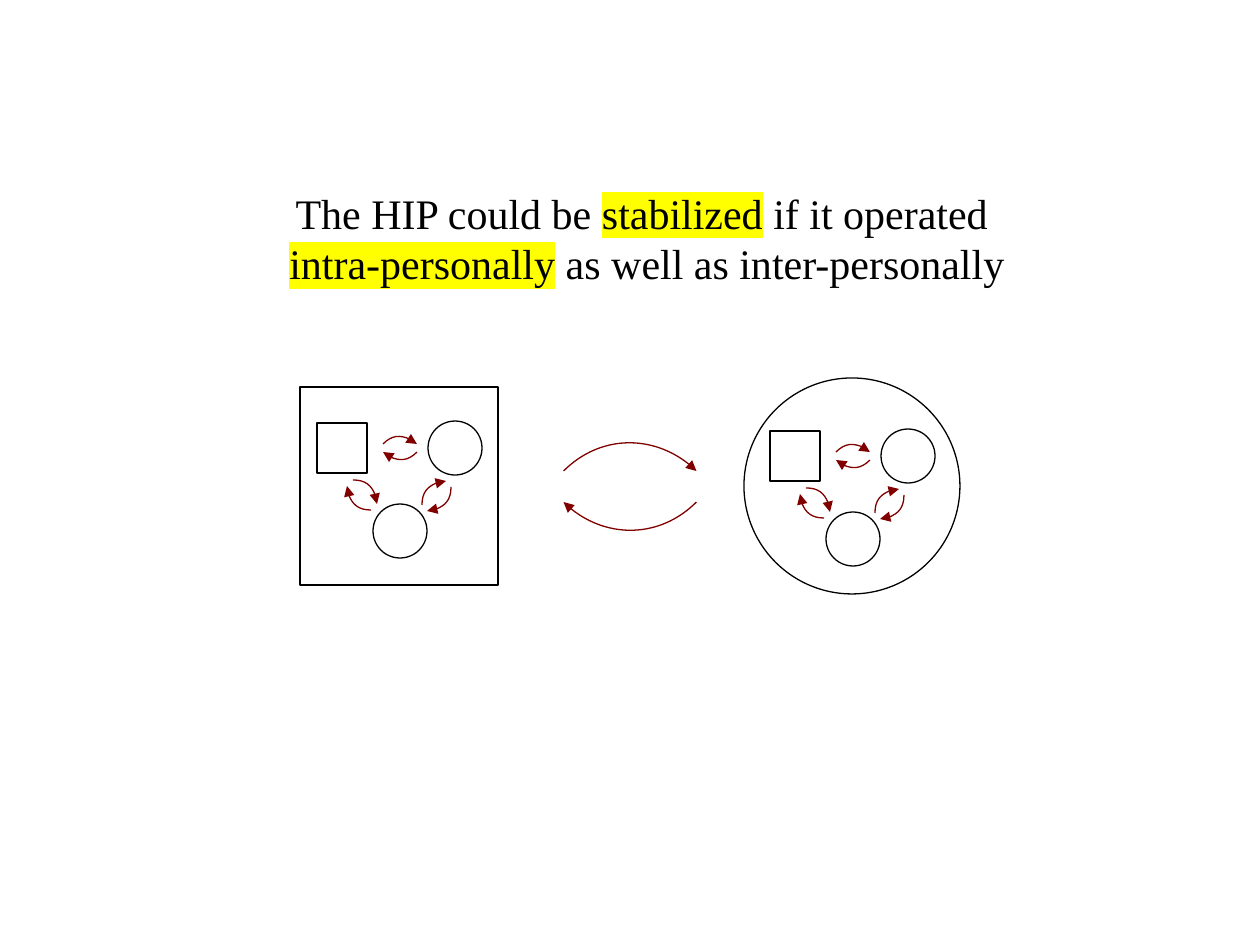
from dataclasses import dataclass

from lxml.etree import SubElement
from pptx import Presentation
from pptx.dml.color import RGBColor
from pptx.enum.shapes import MSO_SHAPE
from pptx.enum.text import MSO_ANCHOR, MSO_AUTO_SIZE, PP_ALIGN
from pptx.oxml import parse_xml
from pptx.oxml.ns import nsdecls, qn
from pptx.shapes.autoshape import Shape
from pptx.util import Emu, Pt

PX = 914400 / 126
BLACK, MAROON, YELLOW = "000000", "800000", "FFFF00"
QUARTER = (
    '<a:moveTo><a:pt x="0" y="0"/></a:moveTo>'
    '<a:cubicBezTo><a:pt x="55" y="0"/><a:pt x="100" y="45"/><a:pt x="100" y="100"/></a:cubicBezTo>'
)
SECTOR = (
    QUARTER + '<a:lnTo><a:pt x="0" y="100"/></a:lnTo><a:lnTo><a:pt x="0" y="0"/></a:lnTo><a:close/>'
)
QUARTER_GEOMETRY = (
    f'<a:custGeom {nsdecls("a")}><a:avLst/><a:gdLst/><a:ahLst/><a:cxnLst/>'
    '<a:rect l="0" t="0" r="r" b="b"/><a:pathLst>'
    f'<a:path w="100" h="100" fill="none">{QUARTER}</a:path>'
    f'<a:path w="100" h="100" stroke="0">{SECTOR}</a:path>'
    '</a:pathLst></a:custGeom>'
)


@dataclass(frozen=True)
class Node:
    kind: MSO_SHAPE
    x: int
    y: int
    size: int


@dataclass(frozen=True)
class Curve:
    x: int
    y: int
    size: int
    rotation: int


PERSONS = [Node(MSO_SHAPE.RECTANGLE, 300, 387, 198), Node(MSO_SHAPE.OVAL, 744, 378, 216)]
EXCHANGE = [Curve(583, 424, 94, 315), Curve(583, 455, 94, 135)]
INNER_ORIGINS = [(317, 421), (770, 429)]
INNER_NODES = [
    Node(MSO_SHAPE.RECTANGLE, 0, 2, 50),
    Node(MSO_SHAPE.OVAL, 111, 0, 54),
    Node(MSO_SHAPE.OVAL, 56, 83, 54),
]
INNER_CURVES = [
    Curve(36, 59, 24, 0),
    Curve(30, 65, 24, 180),
    Curve(110, 66, 24, 90),
    Curve(105, 60, 24, 270),
    Curve(71, 11, 24, 315),
    Curve(71, 19, 24, 135),
]
TITLE = [
    [("The HIP could be ", False), ("stabilized", True), (" if it operated ", False)],
    [("intra-personally", True), (" as well as inter-personally", False)],
]


def px(value: int) -> Emu:
    """Convert pixels to EMU."""
    return Emu(round(value * PX))


def rgb(color: str) -> RGBColor:
    """Turn a hex string into a colour."""
    return RGBColor.from_string(color)


def add_outline(shapes, kind: MSO_SHAPE, x: int, y: int, size: int, color: str) -> Shape:
    """Add an unfilled square shape with a thin line."""
    sp = shapes.add_shape(kind, px(x), px(y), px(size), px(size))
    sp.shadow.inherit = False
    sp.fill.background()
    sp.line.color.rgb = rgb(color)
    sp.line.width = Pt(0.75)
    return sp


def add_node(shapes, node: Node, dx: int = 0, dy: int = 0) -> None:
    """Draw a square or circle at an offset."""
    add_outline(shapes, node.kind, node.x + dx, node.y + dy, node.size, BLACK)


def add_curve(shapes, curve: Curve, dx: int = 0, dy: int = 0) -> None:
    """Draw a quarter-circle arrow at an offset."""
    sp = add_outline(shapes, MSO_SHAPE.RECTANGLE, curve.x + dx, curve.y + dy, curve.size, MAROON)
    sp.rotation = curve.rotation
    spPr = sp._element.spPr
    spPr.replace(spPr.find(qn("a:prstGeom")), parse_xml(QUARTER_GEOMETRY))
    SubElement(spPr.find(qn("a:ln")), qn("a:tailEnd"), type="triangle")


def add_run(p, text: str, marked: bool) -> None:
    """Add a title run, highlighted when marked."""
    r = p.add_run()
    r.text = text
    r.font.size = Pt(24)
    r.font.name = "Times New Roman"
    r.font.color.rgb = rgb(BLACK)
    if marked:
        rPr = r._r.get_or_add_rPr()
        highlight = SubElement(rPr, qn("a:highlight"))
        SubElement(highlight, qn("a:srgbClr"), val=YELLOW)
        rPr.find(qn("a:solidFill")).addnext(highlight)


def fill_title(sp) -> None:
    """Place the title and write its two lines."""
    sp.left, sp.top, sp.width, sp.height = px(266), px(181), px(762), px(115)
    tf = sp.text_frame
    tf.word_wrap = False
    tf.auto_size = MSO_AUTO_SIZE.SHAPE_TO_FIT_TEXT
    tf.vertical_anchor = MSO_ANCHOR.TOP
    for i, runs in enumerate(TITLE):
        p = tf.add_paragraph() if i else tf.paragraphs[0]
        p.alignment = PP_ALIGN.CENTER
        p.line_spacing = 1.0
        for text, marked in runs:
            add_run(p, text, marked)


def main() -> None:
    """Build the slide and save it."""
    prs = Presentation()
    prs.slide_width, prs.slide_height = px(1260), px(945)
    s = prs.slides.add_slide(prs.slide_layouts[5])
    for person in PERSONS:
        add_node(s.shapes, person)
    exchange = s.shapes.add_group_shape()
    for curve in EXCHANGE:
        add_curve(exchange.shapes, curve)
    for dx, dy in INNER_ORIGINS:
        inner = s.shapes.add_group_shape()
        for node in INNER_NODES:
            add_node(inner.shapes, node, dx, dy)
        for curve in INNER_CURVES:
            add_curve(inner.shapes, curve, dx, dy)
    fill_title(s.shapes.title)
    prs.save("out.pptx")


if __name__ == "__main__":
    main()
